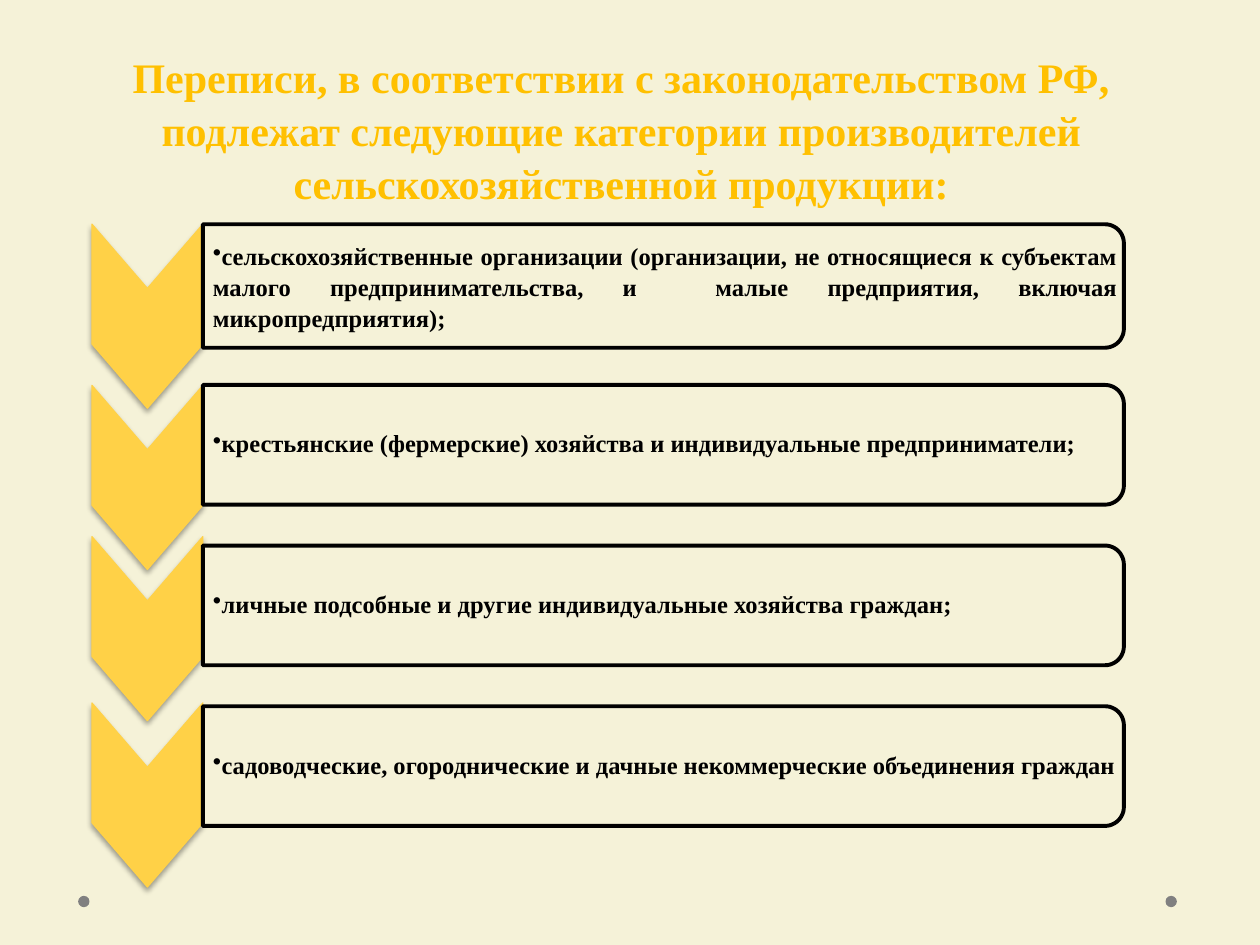
import math

import pptx
import pptx.dml.color
import pptx.enum.shapes
import pptx.enum.text
import pptx.oxml
import pptx.oxml.ns
import pptx.util
from pptx.util import Inches

FONT = "Times New Roman"
CREAM, YELLOW, GOLD, BLACK, GREY = "F5F2D8", "FFD147", "FFC000", "000000", "808080"
ALIGN = pptx.enum.text.PP_ALIGN
ANCHOR = pptx.enum.text.MSO_ANCHOR

# Text, chevron top, box height
CATEGORIES = [
    ("сельскохозяйственные организации (организации, не относящиеся к субъектам "
     "малого предпринимательства, и  малые предприятия, включая микропредприятия);", 1.78, 0.98),
    ("крестьянские (фермерские) хозяйства и индивидуальные предприниматели;", 3.06, 0.95),
    ("личные подсобные и другие индивидуальные хозяйства граждан;", 4.26, 0.95),
    ("садоводческие, огороднические и дачные некоммерческие объединения граждан", 5.58, 0.95),
]


def set_color(color_format, hex_color):
    color_format.rgb = pptx.dml.color.RGBColor.from_string(hex_color)


def paint(shape, fill, line=None, width=0.75):
    shape.shadow.inherit = False
    shape.fill.solid()
    set_color(shape.fill.fore_color, fill)
    if line is None:
        shape.line.fill.background()
    else:
        shape.line.fill.solid()
        set_color(shape.line.color, line)
        shape.line.width = pptx.util.Pt(width)


def write(shape, text, size, color, align, anchor, spacing=1.0, insets=(0.1, 0.05, 0.1, 0.05)):
    frame = shape.text_frame
    frame.word_wrap = True
    frame.auto_size = pptx.enum.text.MSO_AUTO_SIZE.NONE
    frame.vertical_anchor = anchor
    (frame.margin_left, frame.margin_top,
     frame.margin_right, frame.margin_bottom) = map(Inches, insets)
    paragraph = frame.paragraphs[0]
    paragraph.alignment = align
    paragraph.line_spacing = spacing
    run = paragraph.add_run()
    run.text = text
    run.font.name = FONT
    run.font.size = pptx.util.Pt(size)
    run.font.bold = True
    set_color(run.font.color, color)
    return paragraph


def add_bullet(paragraph, hanging):
    properties = paragraph._p.get_or_add_pPr()
    properties.set("marL", str(Inches(hanging)))
    properties.set("indent", str(-Inches(hanging)))
    properties.append(pptx.oxml.parse_xml(
        f'<a:buChar {pptx.oxml.ns.nsdecls("a")} char="•"/>'))


def add_soft_shadow(shape):
    effects = shape._element.spPr.find(pptx.oxml.ns.qn("a:effectLst"))
    effects.append(pptx.oxml.parse_xml(
        f'<a:outerShdw {pptx.oxml.ns.nsdecls("a")} blurRad="{pptx.util.Pt(3.1)}" '
        f'dist="{pptx.util.Pt(1.8)}" dir="5400000" rotWithShape="0">'
        f'<a:srgbClr val="{BLACK}"><a:alpha val="35000"/></a:srgbClr></a:outerShdw>'))


def add_outline(slide, points):
    start, *rest = [(Inches(x), Inches(y)) for x, y in points]
    builder = slide.shapes.build_freeform(*start)
    builder.add_line_segments(rest, close=True)
    return builder.convert_to_shape()


def add_title(slide, left, top, width, height):
    title = slide.shapes.title
    title.left, title.top, title.width, title.height = map(Inches, (left, top, width, height))
    write(title, "Переписи, в соответствии с законодательством РФ, подлежат следующие "
                 "категории производителей сельскохозяйственной продукции:",
          24, GOLD, ALIGN.CENTER, ANCHOR.BOTTOM, spacing=1.05)


def add_chevron(slide, left, top, width, height):
    middle, right, bottom = left + width / 2, left + width, top + height
    notch = 0.51
    chevron = add_outline(slide, [
        (right, top), (right, bottom - notch), (middle, bottom),
        (left, bottom - notch), (left, top), (middle, top + notch)])
    paint(chevron, YELLOW, YELLOW)
    add_soft_shadow(chevron)


def add_category(slide, text, left, top, width, height, justified):
    # Box with its two right corners rounded
    radius, steps = 0.15, 12
    right, bottom = left + width, top + height
    angles = [math.pi / 2 * step / steps for step in range(steps + 1)]
    upper = [(right - radius + radius * math.sin(a), top + radius - radius * math.cos(a))
             for a in angles]
    lower = [(x, top + bottom - y) for x, y in reversed(upper)]
    box = add_outline(slide, [(left, top), *upper, *lower, (left, bottom)])
    paint(box, CREAM, BLACK, 2.25)
    paragraph = write(box, text, 14, BLACK, ALIGN.JUSTIFY if justified else ALIGN.LEFT,
                      ANCHOR.MIDDLE, spacing=1.05 if justified else 0.9,
                      insets=(0.08, 0.05, 0.05, 0.05))
    add_bullet(paragraph, 0 if justified else 0.06)


def add_category_list(slide, left, top, width):
    chevron_width, step = 0.88, 1.275
    for index, (text, chevron_top, box_height) in enumerate(CATEGORIES):
        add_chevron(slide, left, chevron_top, chevron_width, 1.46)
        add_category(slide, text, left + chevron_width, top + step * index,
                     width - chevron_width, box_height, justified=index == 0)


def add_corner_dots(slide, lefts, top, size):
    for left in lefts:
        dot = slide.shapes.add_shape(pptx.enum.shapes.MSO_SHAPE.OVAL, Inches(left),
                                     Inches(top), Inches(size), Inches(size))
        paint(dot, GREY)


def main():
    deck = pptx.Presentation()
    deck.slide_width, deck.slide_height = Inches(10), Inches(7.5)
    slide = deck.slides.add_slide(deck.slide_layouts[5])
    slide.background.fill.solid()
    set_color(slide.background.fill.fore_color, CREAM)

    add_corner_dots(slide, (9.25, 0.62), 7.11, 0.09)
    add_title(slide, 0.43, 0.13, 9, 1.57)
    add_category_list(slide, 0.73, 1.78, 8.19)
    deck.save("out.pptx")


if __name__ == "__main__":
    main()
